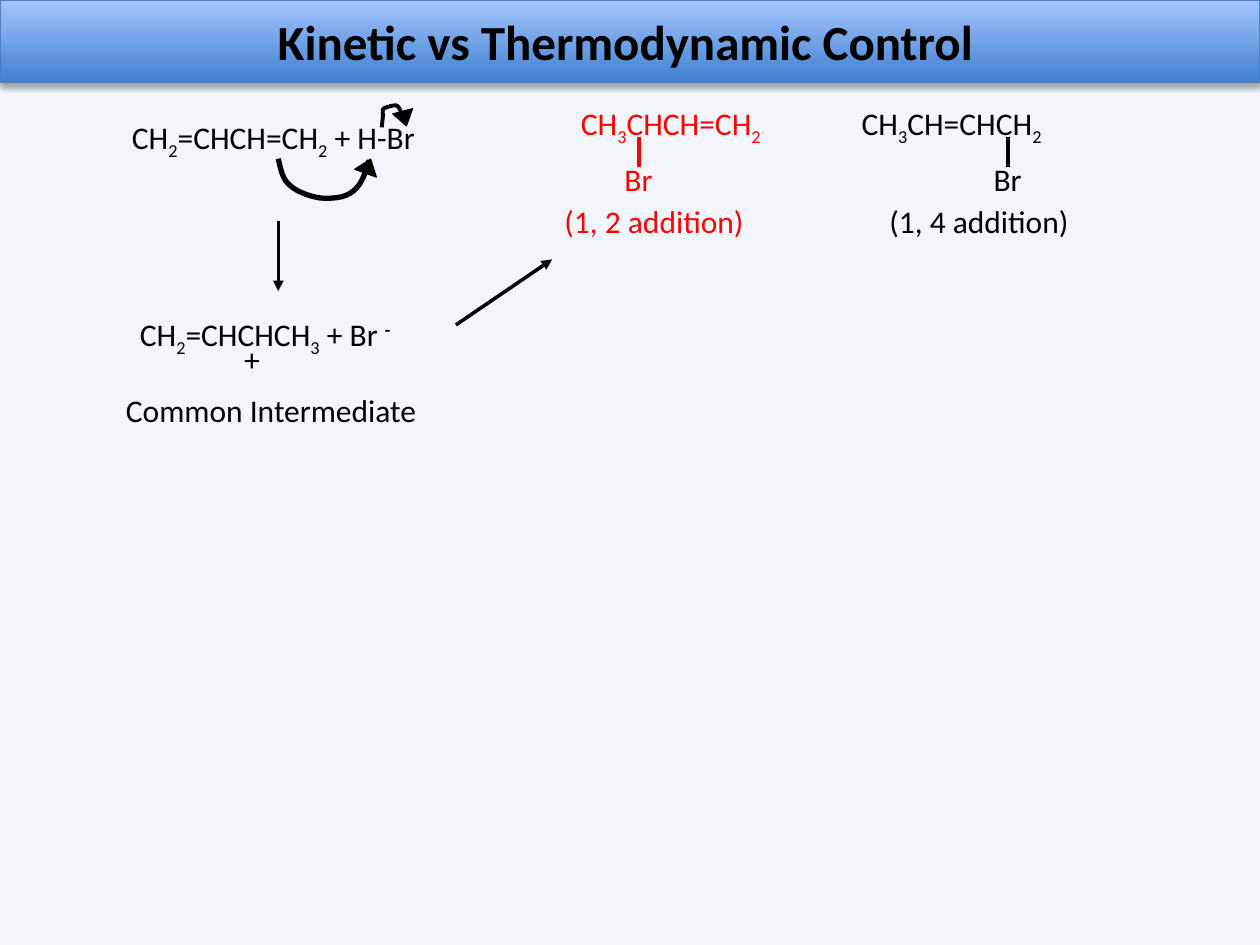
from lxml import etree
from pptx import Presentation
from pptx.dml.color import RGBColor
from pptx.enum.shapes import MSO_CONNECTOR, MSO_SHAPE
from pptx.enum.text import MSO_ANCHOR, MSO_AUTO_SIZE, PP_ALIGN
from pptx.oxml import parse_xml
from pptx.oxml.ns import nsdecls, qn
from pptx.util import Cm, Pt

BLACK = RGBColor(0x00, 0x00, 0x00)
RED = RGBColor(0xFF, 0x00, 0x00)
PAPER = RGBColor(0xF2, 0xF6, 0xFA)
BAR_BOTTOM = RGBColor(0x3F, 0x80, 0xCE)
BAR_TOP = RGBColor(0xA4, 0xC4, 0xFF)
BAR_LINE = RGBColor(0x4B, 0x7E, 0xBC)

FONT = "Calibri"
TEXT_HEIGHT = 1.02
BASELINES = {"2": "-25000", "3": "-25000", "-": "30000"}
BAR_SHADOW = (
    f'<a:effectLst {nsdecls("a")}>'
    '<a:outerShdw blurRad="40000" dist="23000" dir="5400000" rotWithShape="0">'
    '<a:srgbClr val="000000"><a:alpha val="35000"/></a:srgbClr>'
    '</a:outerShdw></a:effectLst>'
)


def add_label(shapes, left, top, width, parts, color=BLACK):
    """Write one line; a part that is a lone digit or sign is lowered or raised."""
    box = shapes.add_textbox(Cm(left), Cm(top), Cm(width), Cm(TEXT_HEIGHT))
    frame = box.text_frame
    frame.word_wrap = False
    frame.auto_size = MSO_AUTO_SIZE.SHAPE_TO_FIT_TEXT
    for part in parts:
        run = frame.paragraphs[0].add_run()
        run.text = part
        run.font.name = FONT
        run.font.size = Pt(18)
        run.font.color.rgb = color
        if part in BASELINES:
            run.font._element.set("baseline", BASELINES[part])
        if part == "-":
            run.font.bold = True


def add_line(shapes, start, end, color=BLACK, arrow=False):
    line = shapes.add_connector(
        MSO_CONNECTOR.STRAIGHT, *(Cm(value) for value in (*start, *end)))
    line.line.color.rgb = color
    line.line.width = Pt(2)
    if arrow:
        etree.SubElement(line.line._get_or_add_ln(), qn("a:tailEnd"), type="triangle")
    etree.SubElement(line._element.spPr, qn("a:effectLst"))


def bezier_points(points, steps=10):
    """Sample a chain of cubic curves: a start, then three points for each curve."""
    for first in range(0, len(points) - 1, 3):
        a, b, c, d = points[first:first + 4]
        for step in range(1, steps + 1):
            t = step / steps
            u = 1 - t
            yield tuple(
                u**3 * a[i] + 3 * u * u * t * b[i] + 3 * u * t * t * c[i] + t**3 * d[i]
                for i in (0, 1))


def add_curved_arrow(slide, left, top, points, width, head, rotation):
    """Draw an electron-pushing arrow; head is left, top, width, height."""
    def place(point):
        return Cm(left + point[0]), Cm(top + point[1])

    builder = slide.shapes.build_freeform(*place(points[0]))
    builder.add_line_segments([place(point) for point in bezier_points(points)], close=False)
    curve = builder.convert_to_shape()
    curve.shadow.inherit = False
    curve.fill.background()
    curve.line.color.rgb = BLACK
    curve.line.width = Pt(width)

    triangle = slide.shapes.add_shape(
        MSO_SHAPE.ISOSCELES_TRIANGLE, *place(head[:2]), Cm(head[2]), Cm(head[3]))
    triangle.rotation = rotation
    triangle.shadow.inherit = False
    triangle.fill.solid()
    triangle.fill.fore_color.rgb = BLACK
    triangle.line.color.rgb = BLACK
    triangle.line.width = Pt(0.75)


def add_title_bar(slide, left, top, width, height):
    bar = slide.shapes.add_shape(
        MSO_SHAPE.RECTANGLE, Cm(left), Cm(top), Cm(width), Cm(height))
    bar.fill.gradient()
    bar.fill.gradient_angle = 90
    for stop, color in zip(bar.fill.gradient_stops, (BAR_BOTTOM, BAR_TOP)):
        stop.color.rgb = color
    bar.line.color.rgb = BAR_LINE
    bar.line.width = Pt(0.75)
    bar._element.spPr.append(parse_xml(BAR_SHADOW))

    frame = bar.text_frame
    frame.margin_left = Cm(5.6)
    frame.vertical_anchor = MSO_ANCHOR.MIDDLE
    paragraph = frame.paragraphs[0]
    paragraph.text = "Kinetic vs Thermodynamic Control"
    paragraph.alignment = PP_ALIGN.LEFT
    font = paragraph.runs[0].font
    font.name = FONT
    font.size = Pt(28)
    font.bold = True
    font.color.rgb = BLACK


def add_reactants(slide, left, top):
    add_label(slide.shapes, left, top, 6.5, ("CH", "2", "=CHCH=CH", "2", " + H-Br"))
    # Double bond attacks the hydrogen
    add_curved_arrow(
        slide, left, top,
        [(3.2, 0.94), (3.25, 1.14), (3.28, 1.35), (3.43, 1.47),
         (3.56, 1.6), (3.84, 1.7), (4.04, 1.73), (4.27, 1.75), (4.55, 1.73),
         (4.7, 1.6), (4.88, 1.47), (4.96, 1.22), (5.03, 0.97)],
        3, (4.78, 0.94, 0.46, 0.3), 19.9)
    # H-Br bond breaks towards the bromine
    add_curved_arrow(
        slide, left, top,
        [(5.29, 0.31), (5.29, 0.23), (5.31, 0.13), (5.31, 0.08),
         (5.31, 0), (5.29, -0.05), (5.34, -0.08), (5.39, -0.1), (5.54, -0.15),
         (5.59, -0.13), (5.64, -0.1), (5.67, -0.02), (5.69, 0.05)],
        2.25, (5.54, -0.02, 0.41, 0.3), 165.3)
    # Step to the intermediate
    add_line(slide.shapes, (left + 3.2, top + 2.19), (left + 3.2, top + 3.61), arrow=True)


def add_intermediate(slide, left, top):
    add_label(slide.shapes, left, top, 5.84,
              ("CH", "2", "=CHCHCH", "3", " + Br ", "-"))
    add_label(slide.shapes, left + 2.1, top + 0.51, 0.84, ("+",))
    add_label(slide.shapes, left - 0.28, top + 1.53, 6.43, ("Common Intermediate",))
    # Step to the products
    add_line(slide.shapes, (left + 6.62, top + 0.33), (left + 8.56, top - 0.99), arrow=True)


def add_product(slide, left, top, formula, bond_offset, name, name_offset, color):
    molecule = slide.shapes.add_group_shape().shapes
    bond = left + bond_offset
    add_label(molecule, left, top, 4.24, formula, color)
    add_line(molecule, (bond, top + 0.8), (bond, top + 1.39), color)
    add_label(molecule, bond - 0.54, top + 1.14, 1.09, ("Br",), color)
    add_label(slide.shapes, left + name_offset, top + 1.97, 4.17, (name,), color)


def main():
    presentation = Presentation()
    presentation.slide_width = Cm(25.4)
    presentation.slide_height = Cm(19.05)
    slide = presentation.slides.add_slide(presentation.slide_layouts[6])
    slide.background.fill.solid()
    slide.background.fill.fore_color.rgb = PAPER

    add_reactants(slide, 2.41, 2.26)
    add_product(slide, 11.46, 1.97, ("CH", "3", "CHCH=CH", "2"), 1.42,
                "(1, 2 addition)", -0.33, RED)
    add_product(slide, 17.12, 1.97, ("CH", "3", "CH=CHCH", "2"), 3.2,
                "(1, 4 addition)", 0.56, BLACK)
    add_title_bar(slide, 0, 0, 25.4, 1.67)
    add_intermediate(slide, 2.57, 6.22)

    presentation.save("out.pptx")


if __name__ == "__main__":
    main()
